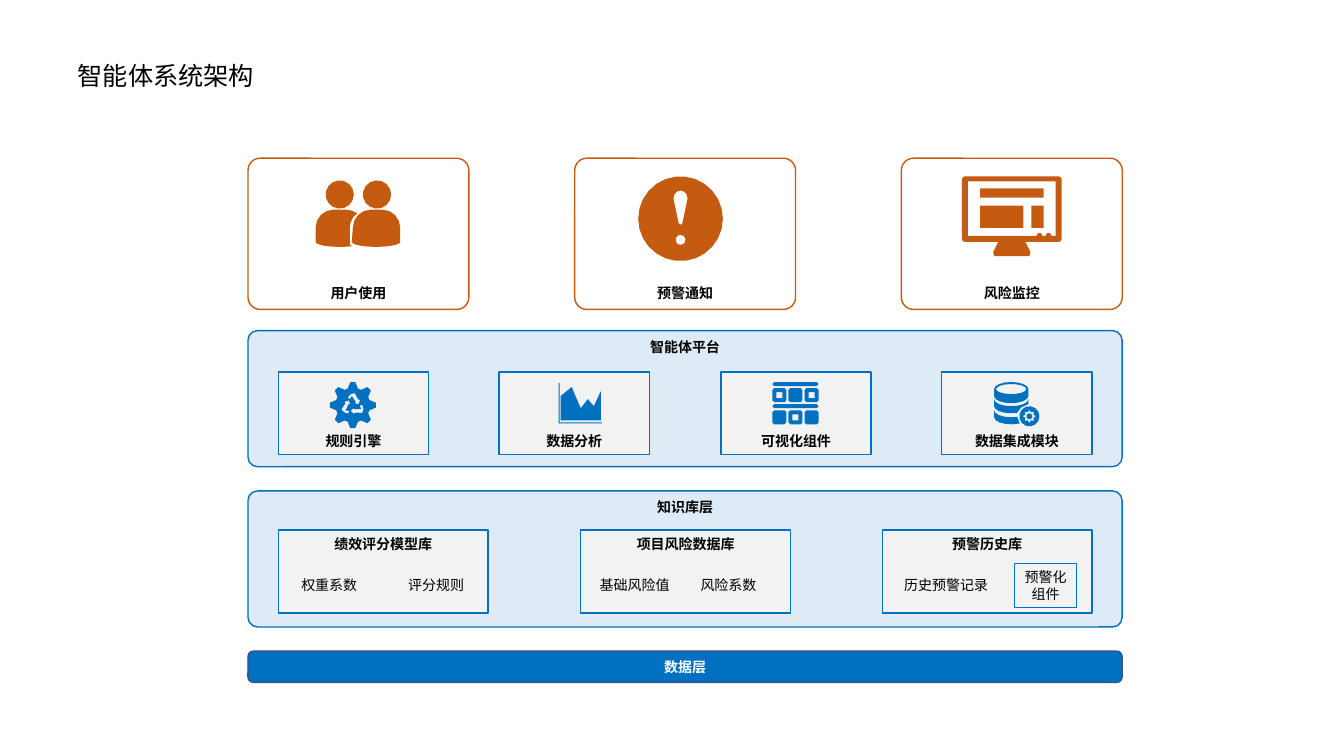
from dataclasses import dataclass
from math import cos, radians, sin, sqrt
from typing import NamedTuple

from lxml import etree
from pptx import Presentation
from pptx.dml.color import RGBColor
from pptx.enum.shapes import MSO_SHAPE
from pptx.enum.text import MSO_ANCHOR, MSO_AUTO_SIZE, PP_ALIGN
from pptx.oxml.ns import qn
from pptx.util import Pt

PX = 9144  # one px is a hundredth of an inch
RECTANGLE, ROUNDED = MSO_SHAPE.RECTANGLE, MSO_SHAPE.ROUNDED_RECTANGLE
TOP, MIDDLE, BOTTOM = MSO_ANCHOR.TOP, MSO_ANCHOR.MIDDLE, MSO_ANCHOR.BOTTOM
LEFT, CENTER = PP_ALIGN.LEFT, PP_ALIGN.CENTER
FIT_SHAPE, FIXED = MSO_AUTO_SIZE.SHAPE_TO_FIT_TEXT, MSO_AUTO_SIZE.NONE


@dataclass(frozen=True)
class Theme:
    font: str = "Noto Sans CJK SC"
    title_size: float = 18
    label_size: float = 10
    blue: str = "0070C0"
    navy: str = "325491"
    pale_blue: str = "DEEBF7"
    grey: str = "F2F2F2"
    orange: str = "C55A11"
    black: str = "000000"
    white: str = "FFFFFF"


THEME = Theme()


class Box(NamedTuple):
    left: int
    top: int
    width: int
    height: int


@dataclass(frozen=True)
class Panel:
    text: str
    box: Box
    fill: str | None
    line: str
    anchor: MSO_ANCHOR = TOP
    corner: float | None = None  # None gives square corners
    color: str = THEME.black
    bold: bool = True
    line_width: float = 1


class Label(NamedTuple):
    text: str
    box: Box


Contour = list[tuple[float, float]]


class Icon(NamedTuple):
    color: str
    contours: list[Contour]


# Outlines
def arc(x: float, y: float, rx: float, ry: float, start: int = 0, end: int = 360) -> Contour:
    """Points on an ellipse; angles run clockwise from the right."""
    steps = max(1, round(abs(end - start) / 360 * 4 * sqrt(max(rx, ry))))
    angles = [radians(start + (end - start) * i / steps) for i in range(steps + 1)]
    return [(x + rx * cos(angle), y + ry * sin(angle)) for angle in angles]


def rectangle(left: float, top: float, width: float, height: float) -> Contour:
    right, bottom = left + width, top + height
    return [(left, top), (right, top), (right, bottom), (left, bottom)]


def rounded(left: float, top: float, width: float, height: float, radius: float) -> Contour:
    centers = rectangle(left + radius, top + radius, width - 2 * radius, height - 2 * radius)
    return [point for (x, y), start in zip(centers, (180, 270, 360, 450))
            for point in arc(x, y, radius, radius, start, start + 90)]


def gear(x: float, y: float, radius: float) -> Contour:
    profile = [(-17, 0.75), (-6, 1), (6, 1), (17, 0.75)]
    return [(x + radius * reach * cos(radians(tooth * 45 + turn)),
             y + radius * reach * sin(radians(tooth * 45 + turn)))
            for tooth in range(8) for turn, reach in profile]


def rotated(points: Contour, x: float, y: float, degrees: int) -> Contour:
    c, s = cos(radians(degrees)), sin(radians(degrees))
    return [(x + (px - x) * c - (py - y) * s, y + (px - x) * s + (py - y) * c)
            for px, py in points]


def spread(left: int, right: int, width: int, count: int) -> list[int]:
    return [round(left + (right - left - width) * i / (count - 1)) for i in range(count)]


# Icons: overlapping contours cut holes
def users_icon() -> list[Contour]:
    front = (arc(368, 226, 18, 18, 180, 270) + arc(379, 226, 18, 18, 270, 360)
             + arc(373, 240, 24, 5, 0, 180))
    back = (arc(331, 226, 18, 18, 180, 270) + [(343, 208), (349, 209), (353, 211)]
            + arc(365, 226, 18, 18, 235, 180) + [(347, 243), (349, 244)]
            + arc(337, 240, 24, 5, 60, 180))
    return [arc(337, 193, 14, 14), arc(374, 193, 14, 14), front, back]


def alert_icon() -> list[Contour]:
    mark = arc(675, 197, 7, 8, 180, 360) + arc(675, 221, 2, 2, 0, 180)
    return [arc(675, 217, 42, 42), arc(675, 238, 5, 5), mark]


def monitor_icon() -> list[Contour]:
    stand = [(990, 240), (1017, 240), (1022, 250), (1021, 254), (986, 254), (985, 250)]
    windows = [Box(960, 180, 87, 54), Box(972, 187, 63, 9),
               Box(972, 204, 43, 22), Box(1023, 204, 12, 22)]
    buttons = [arc(x, 234, 3, 3, 180, 360) for x in (1031, 1040)]
    return [rounded(954, 175, 99, 65, 3), stand, *buttons] + [rectangle(*box) for box in windows]


def rules_icon() -> list[Contour]:
    arrow = [(345, 394), (348, 391), (352, 390), (355, 396), (357, 397),
             (356, 401), (352, 400), (353, 399), (349, 393), (347, 396)]
    return [gear(350, 402, 23)] + [rotated(arrow, 350, 402, turn) for turn in (0, 120, 240)]


def chart_icon() -> list[Contour]:
    area = [(567, 384), (576, 405), (583, 396), (589, 403), (596, 388),
            (596, 417), (556, 417), (556, 393)]
    axes = [(554, 380), (555, 380), (555, 419), (597, 419), (597, 420), (554, 420)]
    return [area, axes]


def tiles_icon() -> list[Contour]:
    contours = [rounded(766, top, 46, 4, 2) for top in (379, 401)]
    for row, top in enumerate((385, 407)):
        for column, left in enumerate(spread(766, 812, 14, 3)):
            contours.append(rounded(left, top, 14, 14, 2))
            if (row + column) % 2 == 0:
                contours.append(rectangle(left + 4, top + 4, 6, 6))
    return contours


def database_icon() -> list[Contour]:
    x, rx, ry = 1003, 17, 7
    lid = arc(x, 386, rx, ry, 180, 360) + arc(x, 393, rx, ry, 0, 180)
    middle = arc(x, 396, rx, ry, 180, 0) + [(1020, 401), (1013, 404)] + arc(x, 403, rx, ry, 70, 180)
    base = arc(x, 407, rx, ry, 180, 70) + arc(x, 414, rx, ry, 60, 180)
    return [lid, arc(x, 386, 15, 5), middle, base,
            arc(1021, 413, 10, 10), gear(1021, 413, 6), arc(1021, 413, 3, 3)]


# Drawing
def format_text(text_frame, size: float, color: str, bold: bool, align: PP_ALIGN) -> None:
    for paragraph in text_frame.paragraphs:
        paragraph.alignment = align
        for run in paragraph.runs:
            run.font.size, run.font.bold, run.font.name = Pt(size), bold, THEME.font
            run.font.color.rgb = RGBColor.from_string(color)
            etree.SubElement(run.font._element, qn("a:ea")).set("typeface", THEME.font)


def add_panel(slide, panel: Panel) -> None:
    kind = RECTANGLE if panel.corner is None else ROUNDED
    shape = slide.shapes.add_shape(kind, *(value * PX for value in panel.box))
    shape.shadow.inherit = False
    if panel.corner is not None:
        shape.adjustments[0] = panel.corner
    if panel.fill:
        shape.fill.solid()
        shape.fill.fore_color.rgb = RGBColor.from_string(panel.fill)
    else:
        shape.fill.background()
    shape.line.color.rgb = RGBColor.from_string(panel.line)
    shape.line.width = Pt(panel.line_width)
    shape.text_frame.text = panel.text
    shape.text_frame.vertical_anchor = panel.anchor
    format_text(shape.text_frame, THEME.label_size, panel.color, panel.bold, CENTER)


def add_label(slide, label: Label) -> None:
    text_frame = slide.shapes.add_textbox(*(value * PX for value in label.box)).text_frame
    text_frame.text = label.text
    text_frame.word_wrap, text_frame.auto_size = False, FIT_SHAPE
    format_text(text_frame, THEME.label_size, THEME.black, False, LEFT)


def add_icon(slide, icon: Icon) -> None:
    first, *others = [[(x * PX, y * PX) for x, y in contour] for contour in icon.contours]
    builder = slide.shapes.build_freeform(*first[0], scale=1.0)
    builder.add_line_segments(first[1:], close=True)
    for outline in others:
        builder.move_to(*outline[0])
        builder.add_line_segments(outline[1:], close=True)
    shape = builder.convert_to_shape()
    shape.shadow.inherit = False
    shape.fill.solid()
    shape.fill.fore_color.rgb = RGBColor.from_string(icon.color)
    shape.line.fill.background()


def add_title(slide, text: str, box: Box) -> None:
    title = slide.shapes.title
    title.left, title.top, title.width, title.height = (value * PX for value in box)
    title.text_frame.text = text
    title.text_frame.word_wrap, title.text_frame.auto_size = False, FIXED
    title.text_frame.vertical_anchor = TOP
    format_text(title.text_frame, THEME.title_size, THEME.black, False, LEFT)


def main() -> None:
    presentation = Presentation()
    presentation.slide_width, presentation.slide_height = 1333 * PX, 750 * PX
    slide = presentation.slides.add_slide(presentation.slide_layouts[5])
    add_title(slide, "智能体系统架构", Box(67, 55, 197, 40))

    # Layers
    panels = [Panel("数据层", Box(246, 646, 867, 31), THEME.blue, THEME.navy, MIDDLE, 0.17, THEME.white)]
    panels += [Panel(text, Box(246, top, 867, 135), THEME.pale_blue, THEME.blue, corner=0.07)
               for text, top in (("知识库层", 487), ("智能体平台", 328))]

    # Libraries, modules and channels
    libraries = ("绩效评分模型库", "项目风险数据库", "预警历史库")
    panels += [Panel(text, Box(left, 526, 208, 82), THEME.grey, THEME.blue)
               for text, left in zip(libraries, spread(276, 1083, 208, 3))]
    modules = ("规则引擎", "数据分析", "可视化组件", "数据集成模块")
    panels += [Panel(text, Box(left, 369, 149, 82), THEME.grey, THEME.blue, BOTTOM)
               for text, left in zip(modules, spread(276, 1083, 149, 4))]
    channels = ("用户使用", "预警通知", "风险监控")
    panels += [Panel(text, Box(left, 157, 219, 150), None, THEME.orange, BOTTOM, 0.08)
               for text, left in zip(channels, spread(246, 1113, 219, 3))]
    panels.append(Panel("预警化\n组件", Box(1006, 559, 62, 44), None, THEME.blue,
                        MIDDLE, bold=False, line_width=0.75))
    for panel in panels:
        add_panel(slide, panel)

    # Library contents
    contents = [("权重系数", 289, 76), ("评分规则", 395, 76), ("基础风险值", 585, 90),
                ("风险系数", 685, 76), ("历史预警记录", 887, 104)]
    for text, left, width in contents:
        add_label(slide, Label(text, Box(left, 567, width, 27)))

    # Icons
    for outline in (rules_icon, chart_icon, tiles_icon, database_icon):
        add_icon(slide, Icon(THEME.blue, outline()))
    for outline in (users_icon, alert_icon, monitor_icon):
        add_icon(slide, Icon(THEME.orange, outline()))
    presentation.save("out.pptx")


if __name__ == "__main__":
    main()
